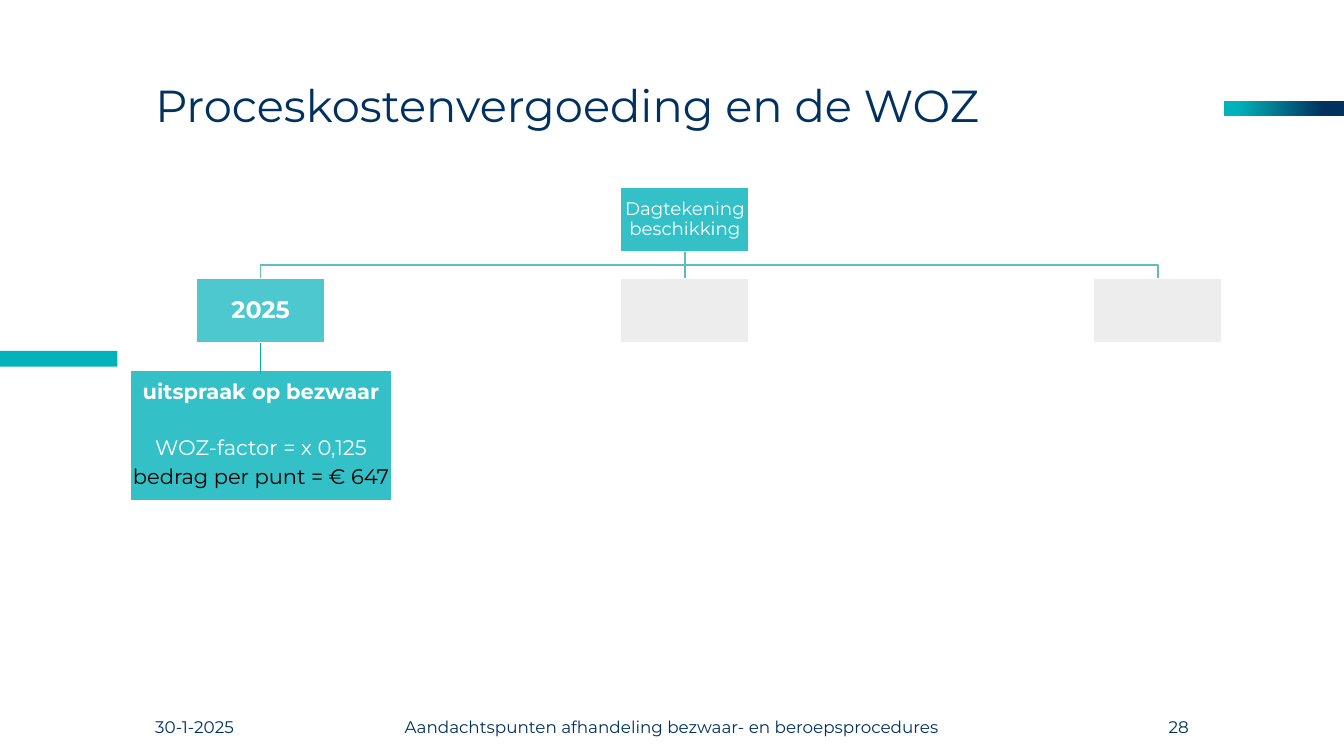
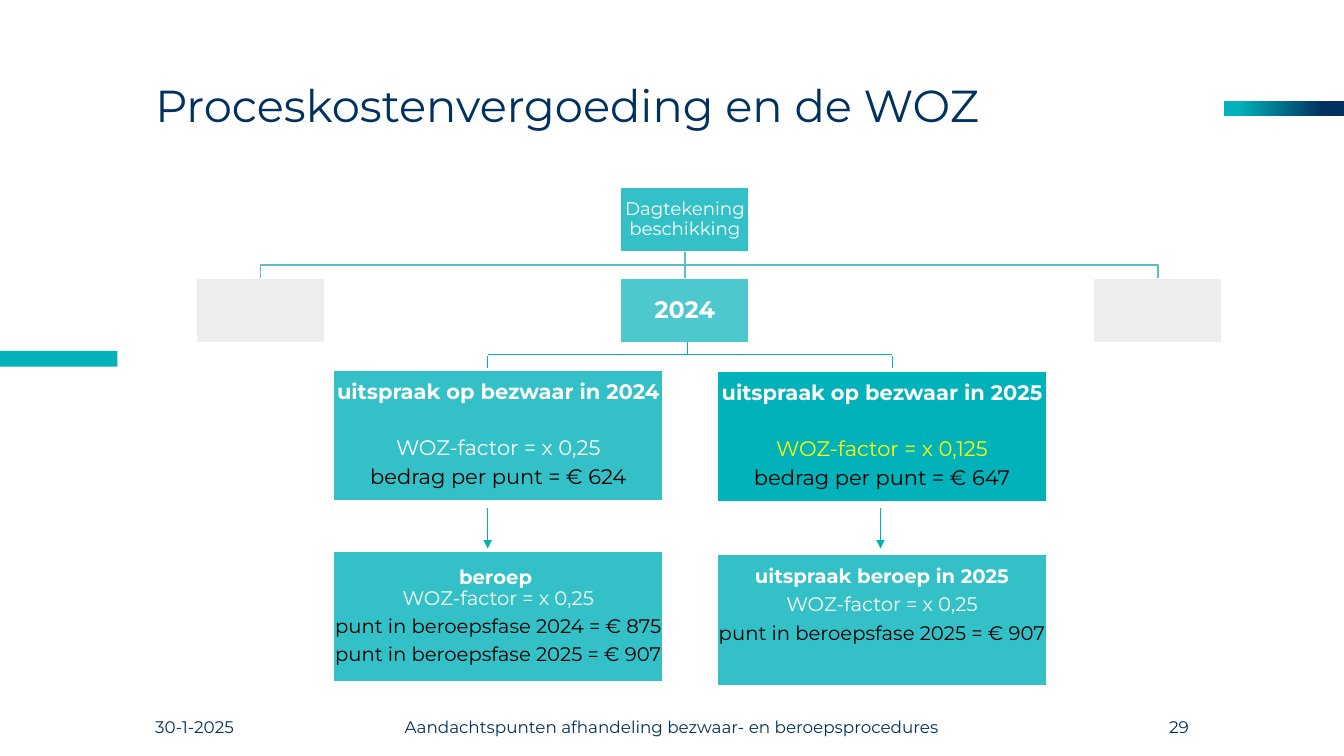
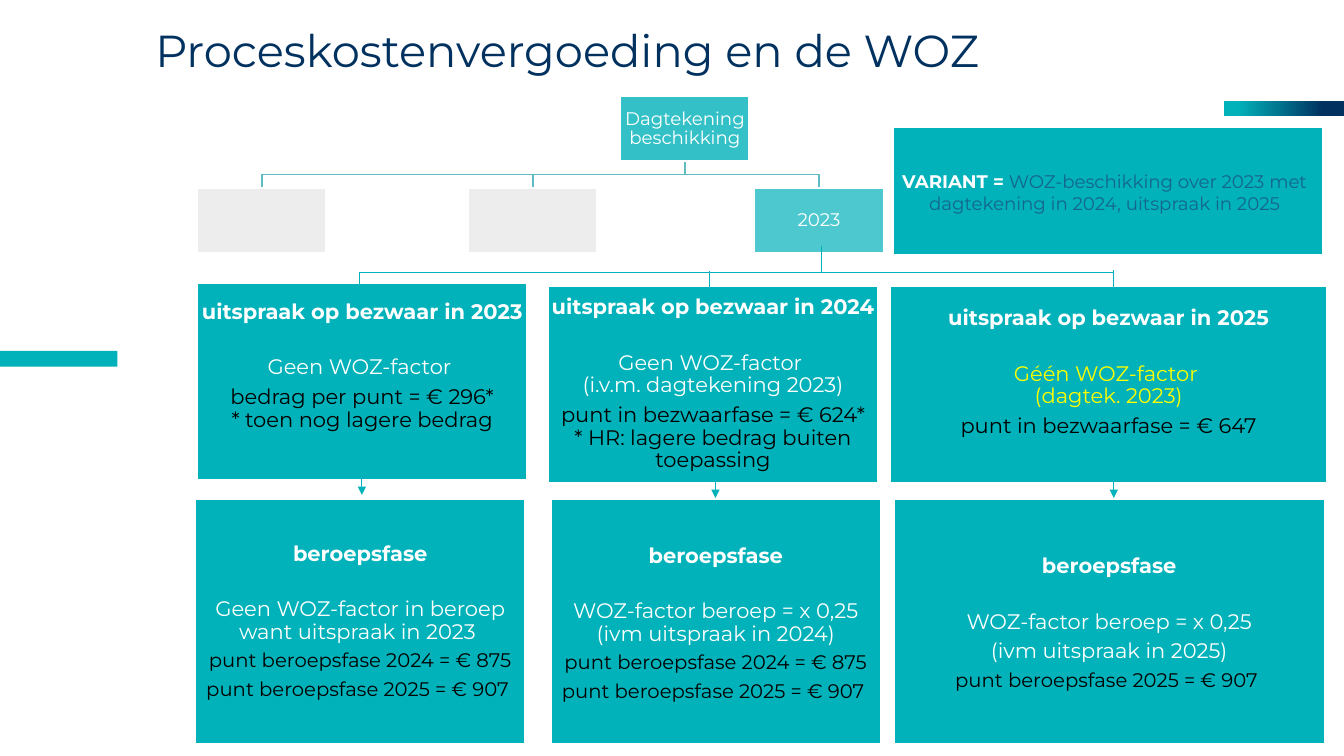
from lxml.etree import SubElement
from pptx import Presentation
from pptx.dml.color import RGBColor
from pptx.enum.shapes import MSO_CONNECTOR, MSO_SHAPE
from pptx.enum.text import MSO_ANCHOR, MSO_AUTO_SIZE, PP_ALIGN
from pptx.oxml.ns import qn
from pptx.util import Cm, Pt

FONT = "Montserrat"
COLOURS = {name: RGBColor.from_string(code) for name, code in {
    "teal": "01B2BA", "navy": "00315F", "tree": "5EBCC2", "grey": "E7E6E6",
    "white": "FFFFFF", "black": "000000", "yellow": "FFFF00", "blue": "156590",
}.items()}

# size, colour, bold, space after
STYLES = {
    "root": (13, "white", False, 0),
    "year": (13, "white", False, 0),
    "chosen year": (17, "white", True, 0),
    "heading": (15, "white", True, 23.5),
    "small heading": (14, "white", True, 5),
    "tight heading": (14, "white", True, 0),
    "factor": (15, "white", False, 5),
    "small factor": (14, "white", False, 5),
    "new factor": (15, "yellow", False, 5),
    "amount": (15, "black", False, 5),
    "small amount": (14, "black", False, 5),
    "variant": (13, "white", True, 0),
}

NODE_W, NODE_H, LEVEL = 3.24, 1.62, 2.3
ROOT_LEFT = 15.64
RULING_W = 8.3

TITLE = "Proceskostenvergoeding en de WOZ"
FOOTER = "Aandachtspunten afhandeling bezwaar- en beroepsprocedures"

# rulings: left, top, width, height, opacity, lift of the text, lines of text
# links: x1, y1, x2, y2, arrow
SLIDES = [
    {
        "number": "28", "title_top": 1.42, "root_top": 4.72,
        "years": [("2025", 4.95), ("2024", ROOT_LEFT), ("2023", 27.56)],
        "chosen": "2025", "chosen_style": "chosen year",
        "rulings": [
            (3.28, 9.32, 6.6, 3.3, 80, 0, [
                ("uitspraak op bezwaar", "heading"),
                ("WOZ-factor = x 0,125", "factor"),
                ("bedrag per punt = € 647", "amount")]),
        ],
        "links": [(6.57, 9.42, 6.57, 8.64, False)],
    },
    {
        "number": "29", "title_top": 1.42, "root_top": 4.72,
        "years": [("2025", 4.95), ("2024", ROOT_LEFT), ("2023", 27.56)],
        "chosen": "2024", "chosen_style": "chosen year",
        "rulings": [
            (8.41, 9.32, RULING_W, 3.3, 80, 0, [
                ("uitspraak op bezwaar in 2024", "heading"),
                ("WOZ-factor = x 0,25", "factor"),
                ("bedrag per punt = € 624", "amount")]),
            (18.08, 9.35, RULING_W, 3.3, 100, 0, [
                ("uitspraak op bezwaar in 2025", "heading"),
                ("WOZ-factor = x 0,125", "new factor"),
                ("bedrag per punt = € 647", "amount")]),
            (8.41, 13.89, RULING_W, 3.3, 80, 0, [
                ("beroep ", "tight heading"),
                ("WOZ-factor = x 0,25", "small factor"),
                ("punt in beroepsfase 2024 = € 875", "small amount"),
                ("punt in beroepsfase 2025 = € 907", "small amount")]),
            (18.08, 13.97, RULING_W, 3.3, 80, 0.72, [
                ("uitspraak beroep in 2025", "small heading"),
                ("WOZ-factor = x 0,25", "small factor"),
                ("punt in beroepsfase 2025 = € 907", "small amount")]),
        ],
        "links": [
            (12.29, 12.8, 12.29, 13.82, True),
            (22.19, 12.8, 22.19, 13.82, True),
            (12.29, 8.92, 22.48, 8.92, False),
            (17.32, 8.92, 17.32, 8.61, False),
            (12.29, 9.27, 12.29, 8.97, False),
            (22.48, 9.27, 22.48, 8.97, False),
        ],
    },
    {
        "number": None, "title_top": 0.03, "root_top": 2.44,
        "years": [("2025", 4.98), ("2024", 11.81), ("2023", 19.02)],
        "chosen": "2023", "chosen_style": "year",
        "rulings": [
            (4.98, 7.14, RULING_W, 4.95, 100, 0.76, [
                ("uitspraak op bezwaar in 2023", "heading"),
                ("Geen WOZ-factor ", "factor"),
                ("bedrag per punt = € 296*\n* toen nog lagere bedrag", "amount")]),
            (4.93, 12.59, RULING_W, 6.15, 100, 0, [
                ("beroepsfase", "heading"),
                ("Geen WOZ-factor in beroep want uitspraak in 2023 ", "factor"),
                ("punt beroepsfase 2024 = € 875", "small amount"),
                ("punt beroepsfase 2025 = € 907 ", "small amount")]),
            (13.82, 7.21, RULING_W, 4.95, 100, 0, [
                ("uitspraak op bezwaar in 2024", "heading"),
                ("Geen WOZ-factor \n(i.v.m. dagtekening 2023)", "factor"),
                ("punt in bezwaarfase = € 624*\n"
                 "* HR: lagere bedrag buiten toepassing", "amount")]),
            (13.89, 12.58, RULING_W, 6.15, 100, -0.12, [
                ("beroepsfase", "heading"),
                ("WOZ-factor beroep = x 0,25 (ivm uitspraak in 2024)", "factor"),
                ("punt beroepsfase 2024 = € 875", "small amount"),
                ("punt beroepsfase 2025 = € 907 ", "small amount")]),
            (22.45, 7.21, 10.98, 4.95, 100, 0.58, [
                ("uitspraak op bezwaar in 2025", "heading"),
                ("Géén WOZ-factor \n(dagtek. 2023)", "new factor"),
                ("punt in bezwaarfase = € 647", "amount")]),
            (22.53, 12.58, 10.85, 6.15, 100, -0.12, [
                ("beroepsfase", "heading"),
                ("WOZ-factor beroep = x 0,25", "factor"),
                ("(ivm uitspraak in 2025)", "factor"),
                ("punt beroepsfase 2025 = € 907 ", "small amount")]),
        ],
        "links": [
            (9.12, 11.91, 9.12, 12.47, True),
            (18.03, 11.84, 18.03, 12.55, True),
            (28.07, 11.86, 28.07, 12.55, True),
            (9.05, 6.86, 28.07, 6.86, False),
            (9.05, 7.65, 9.05, 6.86, False),
            (17.88, 7.62, 17.88, 6.83, False),
            (28.07, 7.59, 28.07, 6.81, False),
            (20.7, 6.88, 20.7, 6.2, False),
        ],
    },
]


def add_node(slide, left, top, width, height, opacity, lift, lines, colour="teal"):
    """Add a white-edged box with one paragraph per (text, style) line."""
    node = slide.shapes.add_shape(
        MSO_SHAPE.RECTANGLE, Cm(left), Cm(top), Cm(width), Cm(height))
    node.shadow.inherit = False
    node.fill.solid()
    node.fill.fore_color.rgb = COLOURS[colour]
    if opacity < 100:
        fill_colour = node._element.spPr.find(qn("a:solidFill"))[0]
        SubElement(fill_colour, qn("a:alpha"), val=str(opacity * 1000))
    node.line.color.rgb = COLOURS["white"]
    node.line.width = Pt(1)
    frame = node.text_frame
    frame.word_wrap = True
    frame.vertical_anchor = MSO_ANCHOR.MIDDLE
    frame.margin_left = frame.margin_right = Cm(0)
    frame.margin_top = Cm(max(-lift, 0))
    frame.margin_bottom = Cm(max(lift, 0))
    for index, (text, style) in enumerate(lines):
        paragraph = frame.add_paragraph() if index else frame.paragraphs[0]
        paragraph.text = text
        paragraph.alignment = PP_ALIGN.CENTER
        paragraph.line_spacing = 0.9
        size, text_colour, bold, after = STYLES[style]
        paragraph.space_after = Pt(after)
        paragraph.font.name = FONT
        paragraph.font.size = Pt(size)
        paragraph.font.bold = bold
        paragraph.font.color.rgb = COLOURS[text_colour]
    return node


def add_link(slide, x1, y1, x2, y2, arrow):
    link = slide.shapes.add_connector(
        MSO_CONNECTOR.STRAIGHT, Cm(x1), Cm(y1), Cm(x2), Cm(y2))
    link.line.color.rgb = COLOURS["teal"]
    link.line.width = Pt(0.5)
    if arrow:
        SubElement(link.line._get_or_add_ln(), qn("a:tailEnd"), type="triangle")
    SubElement(link._element.spPr, qn("a:effectLst"))


prs = Presentation()
prs.slide_width, prs.slide_height = Cm(33.87), Cm(19.05)

for content in SLIDES:
    slide = prs.slides.add_slide(prs.slide_layouts[5])

    # Accent bars
    right_bar = slide.shapes.add_shape(
        MSO_SHAPE.RECTANGLE, Cm(30.84), Cm(2.54), Cm(3.03), Cm(0.38))
    right_bar.fill.gradient()
    right_bar.fill.gradient_angle = 0
    for stop, position, colour in zip(
            right_bar.fill.gradient_stops, (0.11, 0.83), ("teal", "navy")):
        stop.position = position
        stop.color.rgb = COLOURS[colour]
    left_bar = slide.shapes.add_shape(
        MSO_SHAPE.RECTANGLE, Cm(0), Cm(8.84), Cm(2.96), Cm(0.4))
    left_bar.fill.solid()
    left_bar.fill.fore_color.rgb = COLOURS["teal"]
    for bar in (right_bar, left_bar):
        bar.shadow.inherit = False
        bar.line.fill.background()

    # Title
    title = slide.shapes.title
    title.left, title.top = Cm(3.66), Cm(content["title_top"])
    title.width, title.height = Cm(26.54), Cm(2.59)
    frame = title.text_frame
    frame.text = TITLE
    frame.auto_size = MSO_AUTO_SIZE.NONE
    frame.vertical_anchor = MSO_ANCHOR.MIDDLE
    frame.margin_right = Cm(0.89)
    heading = frame.paragraphs[0]
    heading.alignment = PP_ALIGN.LEFT
    heading.line_spacing = 0.9
    heading.font.name = FONT
    heading.font.size = Pt(32)
    heading.font.color.rgb = COLOURS["navy"]

    # Tree of years: only the chosen year is labelled
    root_top = content["root_top"]
    root_x, root_bottom = ROOT_LEFT + NODE_W / 2, root_top + NODE_H
    year_top = root_top + LEVEL
    bend = (root_bottom + year_top) / 2
    for year, left in content["years"]:
        year_x = left + NODE_W / 2
        builder = slide.shapes.build_freeform(Cm(root_x), Cm(root_bottom))
        builder.add_line_segments(
            [(Cm(root_x), Cm(bend)), (Cm(year_x), Cm(bend)),
             (Cm(year_x), Cm(year_top))], close=False)
        branch = builder.convert_to_shape()
        branch.shadow.inherit = False
        branch.fill.background()
        branch.line.color.rgb = COLOURS["tree"]
        branch.line.width = Pt(1)
    add_node(slide, ROOT_LEFT, root_top, NODE_W, NODE_H, 80, 0,
             [("Dagtekening beschikking", "root")])
    for year, left in content["years"]:
        chosen = year == content["chosen"]
        add_node(slide, left, year_top, NODE_W, NODE_H, 70, 0,
                 [(year, content["chosen_style"])] if chosen else [],
                 "teal" if chosen else "grey")

    # Rulings and the links between them
    for ruling in content["rulings"]:
        add_node(slide, *ruling)
    for link in content["links"]:
        add_link(slide, *link)

    if content["number"] is None:
        variant = add_node(slide, 22.51, 3.22, 10.82, 3.2, 100, -0.05,
                           [("VARIANT = ", "variant")])
        variant.text_frame.margin_right = Cm(0.18)
        paragraph = variant.text_frame.paragraphs[0]
        paragraph.line_spacing = 1.0
        explanation = paragraph.add_run()
        explanation.text = ("WOZ-beschikking over 2023 met dagtekening in 2024, "
                            "uitspraak in 2025")
        explanation.font.bold = False
        explanation.font.color.rgb = COLOURS["blue"]
        continue

    # Footer
    for text, left, width, alignment in (
            ("30-1-2025", 3.66, 3.07, PP_ALIGN.LEFT),
            (FOOTER, 7.72, 18.42, PP_ALIGN.CENTER),
            (content["number"], 27.14, 3.07, PP_ALIGN.RIGHT)):
        footer = slide.shapes.add_textbox(Cm(left), Cm(17.93), Cm(width), Cm(0.79))
        footer.text_frame.word_wrap = True
        footer.text_frame.vertical_anchor = MSO_ANCHOR.MIDDLE
        paragraph = footer.text_frame.paragraphs[0]
        paragraph.text = text
        paragraph.alignment = alignment
        paragraph.font.name = FONT
        paragraph.font.size = Pt(12)
        paragraph.font.color.rgb = COLOURS["navy"]

prs.save("out.pptx")
